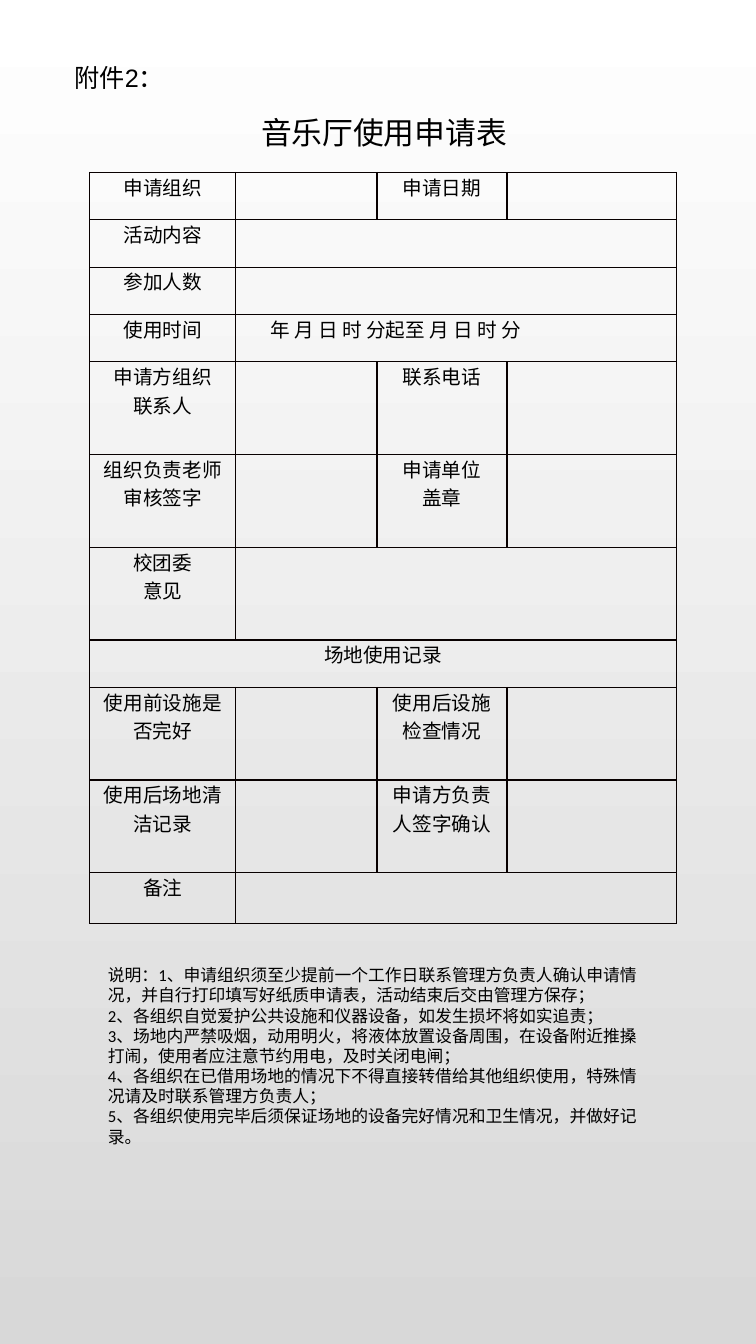
from lxml.etree import SubElement
from pptx import Presentation
from pptx.dml.color import RGBColor
from pptx.enum.text import MSO_ANCHOR as Anchor, MSO_AUTO_SIZE as AutoSize, PP_ALIGN as Align
from pptx.oxml import parse_xml
from pptx.oxml.ns import nsdecls, qn
from pptx.util import Inches, Pt

BLACK = RGBColor(0x00, 0x00, 0x00)
BORDER = RGBColor(0x08, 0x00, 0x00)
GRADIENT_TOP = RGBColor(0xFF, 0xFF, 0xFF)
GRADIENT_BOTTOM = RGBColor(0xD8, 0xD8, 0xD8)
TABLE_FONT = "Noto Sans CJK SC"

COLUMN_WIDTHS = [1.45, 1.4, 1.29, 1.68]
SHORT_ROW, TALL_ROW, LAST_ROW = 0.47, 0.92, 0.5
FORM_ROWS = [
    (SHORT_ROW, ["申请组织", "", "申请日期", ""]),
    (SHORT_ROW, ["活动内容", ""]),
    (SHORT_ROW, ["参加人数", ""]),
    (SHORT_ROW, ["使用时间", "年 月 日 时 分起至 月 日 时 分"]),
    (TALL_ROW, ["申请方组织\n联系人", "", "联系电话", ""]),
    (TALL_ROW, ["组织负责老师审核签字", "", "申请单位\n盖章", ""]),
    (TALL_ROW, ["校团委\n意见", ""]),
    (SHORT_ROW, ["场地使用记录"]),
    (TALL_ROW, ["使用前设施是否完好", "", "使用后设施检查情况", ""]),
    (TALL_ROW, ["使用后场地清洁记录", "", "申请方负责人签字确认", ""]),
    (LAST_ROW, ["备注", ""]),
]
NOTES = "\n".join([
    "说明：1、申请组织须至少提前一个工作日联系管理方负责人确认申请情况，并自行打印填写好纸质申请表，活动结束后交由管理方保存；",
    "2、各组织自觉爱护公共设施和仪器设备，如发生损坏将如实追责；",
    "3、场地内严禁吸烟，动用明火，将液体放置设备周围，在设备附近推搡打闹，使用者应注意节约用电，及时关闭电闸；",
    "4、各组织在已借用场地的情况下不得直接转借给其他组织使用，特殊情况请及时联系管理方负责人；",
    "5、各组织使用完毕后须保证场地的设备完好情况和卫生情况，并做好记录。",
])


def write_text(frame, text, font, size, align=Align.LEFT, east_asian=None, line_spacing=None):
    frame.word_wrap = True
    frame.text = text
    for paragraph in frame.paragraphs:
        paragraph.alignment = align
        paragraph.space_before = Pt(0)
        if line_spacing:
            paragraph.line_spacing = line_spacing
        for run in paragraph.runs:
            run.font.name = font
            run.font.size = Pt(size)
            run.font.color.rgb = BLACK
            if east_asian:
                SubElement(run.font._element, qn("a:ea"), typeface=east_asian)


def place(shape, left, top, width, height):
    shape.left, shape.top = Inches(left), Inches(top)
    shape.width, shape.height = Inches(width), Inches(height)


def paint_background(slide):
    fill = slide.background.fill
    fill.gradient()
    fill.gradient_angle = 270
    for stop, color in zip(fill.gradient_stops, (GRADIENT_TOP, GRADIENT_BOTTOM)):
        stop.color.rgb = color


def format_cell(cell):
    cell.fill.background()
    cell.margin_left = cell.margin_right = Inches(0.07)
    cell.margin_top = cell.margin_bottom = 0
    properties = cell._tc.get_or_add_tcPr()
    for index, side in enumerate(("lnL", "lnR", "lnT", "lnB")):
        properties.insert(index, parse_xml(
            f'<a:{side} {nsdecls("a")} w="{Pt(1)}"><a:solidFill>'
            f'<a:srgbClr val="{BORDER}"/></a:solidFill></a:{side}>'))


def add_form(slide):
    frame = slide.shapes.add_table(
        len(FORM_ROWS), len(COLUMN_WIDTHS),
        Inches(0.89), Inches(1.71), Inches(5.82), Inches(7.44))
    table = frame.table
    table.first_row = table.horz_banding = False
    for column, width in zip(table.columns, COLUMN_WIDTHS):
        column.width = Inches(width)
    for row, (height, texts) in zip(table.rows, FORM_ROWS):
        row.height = Inches(height)
        cells = list(row.cells)
        for cell in cells:
            format_cell(cell)
        if len(texts) < len(cells):
            cells[len(texts) - 1].merge(cells[-1])
        for index, text in enumerate(texts):
            if not text:
                continue
            is_label = index % 2 == 0
            if not is_label:
                cells[index].margin_left = Inches(0.34)
            write_text(cells[index].text_frame, text, TABLE_FONT, 14,
                       align=Align.CENTER if is_label else Align.LEFT,
                       east_asian=TABLE_FONT)


def add_title(slide):
    title = slide.shapes.title
    place(title, 0.9, 1.08, 5.82, 0.47)
    title.text_frame.auto_size = AutoSize.NONE
    title.text_frame.vertical_anchor = Anchor.MIDDLE
    write_text(title.text_frame, "音乐厅使用申请表", "Calibri", 22, align=Align.CENTER)


def add_notes(slide):
    body = slide.placeholders[1]
    place(body, 0.97, 9.32, 5.56, 2.12)
    frame = body.text_frame
    frame.auto_size = AutoSize.NONE
    frame.margin_top = Inches(0.25)
    write_text(frame, NOTES, "Calibri", 12, line_spacing=Pt(14.4))
    for paragraph in frame.paragraphs:
        properties = paragraph._p.get_or_add_pPr()
        properties.set("marL", "0")
        properties.set("indent", "0")
        SubElement(properties, qn("a:buNone"))


def add_attachment_label(slide):
    label = slide.shapes.add_textbox(Inches(0.64), Inches(0.57), Inches(6.21), Inches(0.4))
    write_text(label.text_frame, "附件2：", "Arial", 18)


def main():
    presentation = Presentation()
    presentation.slide_width = Inches(7.5)
    presentation.slide_height = Inches(13.33)
    slide = presentation.slides.add_slide(presentation.slide_layouts[1])
    paint_background(slide)
    add_title(slide)
    add_form(slide)
    add_notes(slide)
    add_attachment_label(slide)
    presentation.save("out.pptx")


if __name__ == "__main__":
    main()
